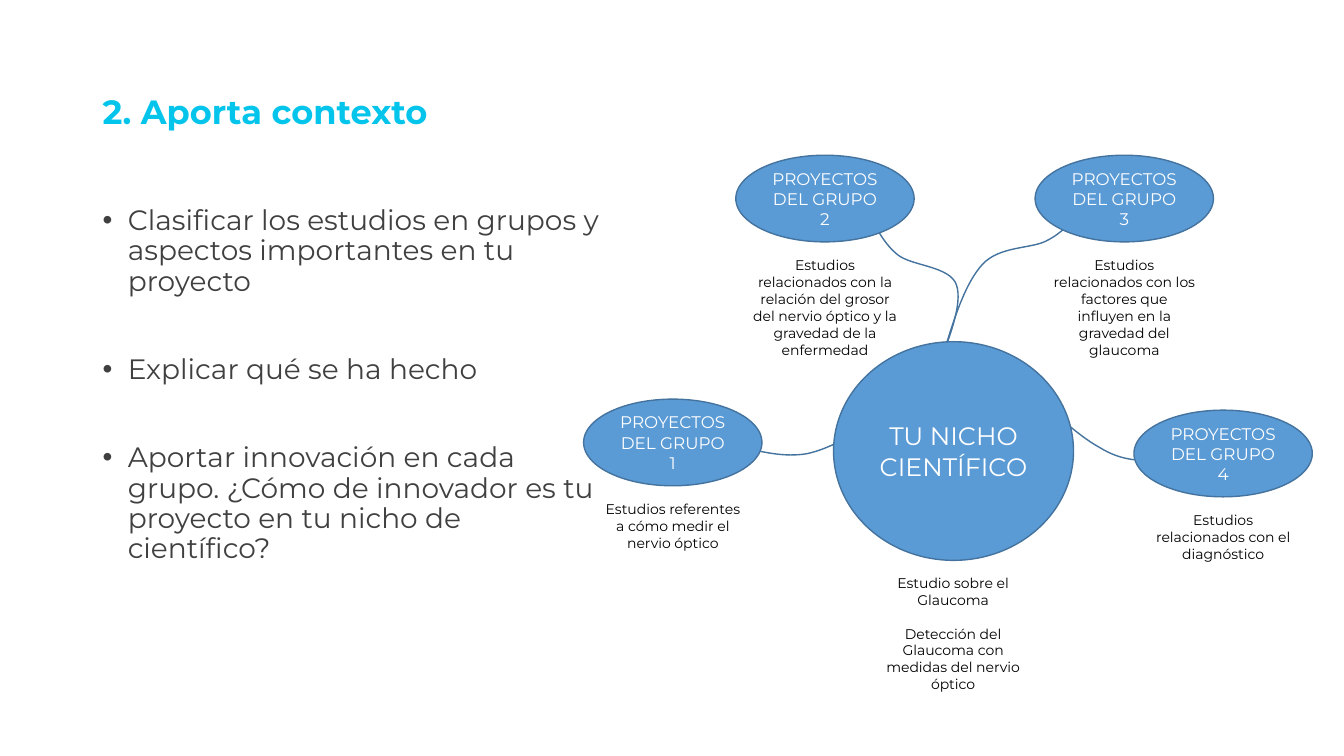
from pptx import Presentation
from pptx import util as u
from pptx.dml.color import RGBColor
from pptx.enum import shapes, text
from lxml import etree

Pt = u.Pt
A = "{http://schemas.openxmlformats.org/drawingml/2006/main}"
BLUE, EDGE = "5B9BD5", "43739E"


def color(fmt, value):
    fmt.rgb = RGBColor.from_string(value)


def write(sp, paragraphs, size, value, align=None, gap=0, bold=False):
    tf = sp.text_frame
    tf.word_wrap = True
    for i, content in enumerate(paragraphs):
        p = tf.paragraphs[0] if i == 0 else tf.add_paragraph()
        p.alignment = align
        p.space_before = Pt(gap if i else 0)
        r = p.add_run()
        r.text = content
        r.font.name = "Montserrat"
        r.font.size = Pt(size)
        r.font.bold = bold
        color(r.font.color, value)
    return tf


prs = Presentation()
prs.slide_width, prs.slide_height = Pt(960), Pt(540)
s = prs.slides.add_slide(prs.slide_layouts[6])
CENTER = text.PP_ALIGN.CENTER
MIDDLE = text.MSO_ANCHOR.MIDDLE

curves = [
    [(733, 276.5), (751.7, 293.8), (769.7, 311), (785.5, 319.7),
     (800.6, 329), (812.9, 329), (824.4, 329)],
    [(675.4, 247.7), (682.6, 223.9), (690.5, 200.9), (702, 188.6),
     (714.2, 175.7), (736.6, 177.8), (747.4, 172.1),
     (758.9, 166.3), (764.6, 159.1), (770.4, 151.9)],
    [(668.9, 265), (678.2, 241.2), (687.6, 217.4), (683.3, 203.8),
     (679, 190.1), (651.6, 190.1), (641.5, 182.2),
     (632.2, 175), (626.4, 163.4), (623.5, 158.4)],
    [(628.6, 299.5), (610.6, 309.6), (593.3, 320.4), (576.7, 324),
     (560.2, 326.9), (544.3, 322.6), (530.6, 319.7)],
]
for points in curves:
    start, *rest = [(Pt(x), Pt(y)) for x, y in points]
    builder = s.shapes.build_freeform(*start)
    builder.add_line_segments(rest, close=False)
    sp = builder.convert_to_shape()
    sp.shadow.inherit = False
    sp.fill.background()
    color(sp.line.color, EDGE)
    sp.line.width = Pt(1)
    outline = next(sp.element.iter(A + "path"))
    segments = outline.findall(A + "lnTo")
    for i in range(0, len(segments), 3):
        bezier = etree.SubElement(outline, A + "cubicBezTo")
        for segment in segments[i:i + 3]:
            bezier.append(segment[0])
            outline.remove(segment)

title = s.shapes.add_textbox(Pt(66.2), Pt(28.8), Pt(828), Pt(104.4))
tf = write(title, ["2. Aporta contexto"], 24, "03C4EB", bold=True)
tf.vertical_anchor = MIDDLE
tf.paragraphs[0].line_spacing = 0.9

body = s.shapes.add_textbox(Pt(66.2), Pt(144), Pt(370), Pt(342.7))
tf = write(body, [
    "Clasificar los estudios en grupos y aspectos importantes en tu proyecto",
    "Explicar qué se ha hecho",
    "Aportar innovación en cada grupo. ¿Cómo de innovador es tu proyecto en tu nicho de científico?",
], 20, "404040", gap=41.5)
for p in tf.paragraphs:
    p.line_spacing = 0.9
    pPr = p._p.get_or_add_pPr()
    pPr.set("marL", str(Pt(18)))
    pPr.set("indent", str(-Pt(18)))
    etree.SubElement(pPr, A + "buFont", typeface="Arial")
    etree.SubElement(pPr, A + "buChar", char="•")

groups = [
    (416.9, 285.1, 44, "Estudios referentes a cómo medir el nervio óptico"),
    (525.6, 110.9, 80, "Estudios relacionados con la relación del grosor del nervio óptico y la gravedad de la enfermedad"),
    (739.4, 110.9, 80, "Estudios relacionados con los factores que influyen en la gravedad del glaucoma"),
    (810, 293, 44, "Estudios relacionados con el diagnóstico"),
]
ellipses = [(595.4, 244.1, 171.4, 156.2, "TU NICHO CIENTÍFICO", 18)]
captions = [(622.1, 406.8, 92, [
    "Estudio sobre el Glaucoma",
    "Detección del Glaucoma con medidas del nervio óptico",
])]
for number, (x, y, h, caption) in enumerate(groups, 1):
    ellipses.append((x, y, 127.4, 61.9, f"PROYECTOS DEL GRUPO {number}", 12))
    captions.append((x + 5, y + 69.1, h, [caption]))

for x, y, w, h, label, size in ellipses:
    sp = s.shapes.add_shape(shapes.MSO_SHAPE.OVAL, Pt(x), Pt(y), Pt(w), Pt(h))
    sp.shadow.inherit = False
    sp.fill.solid()
    color(sp.fill.fore_color, BLUE)
    color(sp.line.color, EDGE)
    sp.line.width = Pt(1)
    write(sp, [label], size, "FFFFFF", CENTER).vertical_anchor = MIDDLE

for x, y, h, paragraphs in captions:
    sp = s.shapes.add_textbox(Pt(x), Pt(y), Pt(117.4), Pt(h))
    write(sp, paragraphs, 10, "000000", CENTER, gap=12.2)

prs.save("out.pptx")
